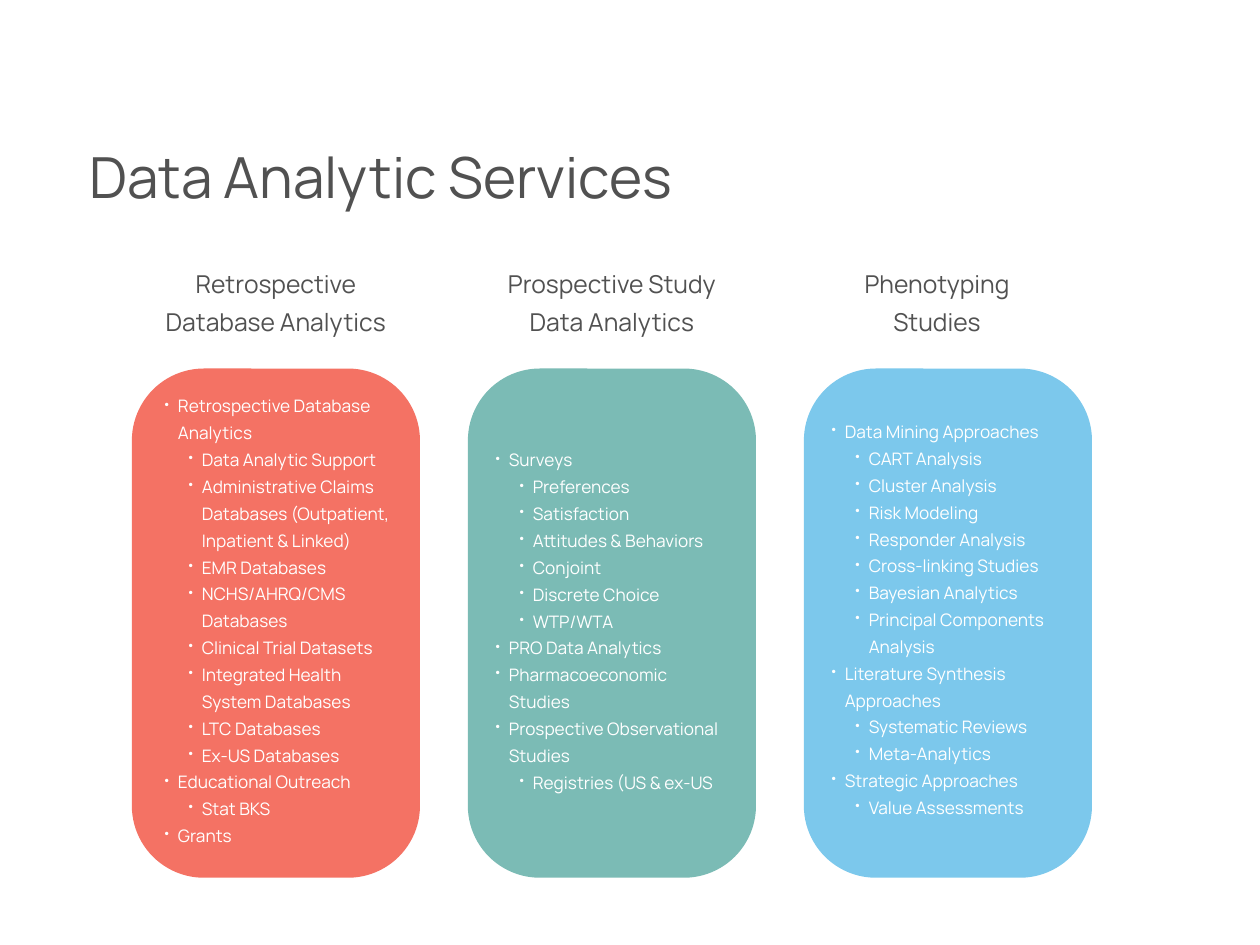
from dataclasses import dataclass

from lxml.etree import SubElement
from pptx import Presentation
from pptx.dml.color import RGBColor
from pptx.enum.shapes import MSO_SHAPE
from pptx.enum.text import MSO_ANCHOR, MSO_AUTO_SIZE, PP_ALIGN
from pptx.oxml.ns import qn
from pptx.util import Inches, Pt

WIDTH, HEIGHT = Inches(14.22), Inches(10.67)
COL, ROW = WIDTH / 15, HEIGHT / 35
FIRST_CARD, CARD_PITCH, CARD_COLS = 1.57, 4, 3.43
CARD_TOP, CARD_ROWS = 13.65, 18.86
HEADING_TOP, HEADING_ROWS = 9.55, 2.98
LIST_COLS = 2.77
FONT, INK, WHITE = "Manrope", "515151", "FFFFFF"
LINE_SPACING = 1.3
PAD = Inches(0.03)
HANG = Inches(0.15)
INDENTS = (Inches(0.15), Inches(0.42))


@dataclass
class Box:
    left: float
    top: float
    cols: float
    rows: float

    def emu(self) -> tuple[int, int, int, int]:
        return (round(self.left * COL), round(self.top * ROW),
                round(self.cols * COL), round(self.rows * ROW))


@dataclass
class Service:
    heading: str
    fill: str
    heading_inset: float
    heading_cols: float
    list_inset: float
    list_top: float
    list_rows: float
    topics: list[tuple[str, list[str]]]


SERVICES = [
    Service("Retrospective Database Analytics", "F47264", 0.33, 2.77, 0.39, 14.43, 17.52, [
        ("Retrospective Database Analytics", [
            "Data Analytic Support",
            "Administrative Claims Databases (Outpatient, Inpatient & Linked)",
            "EMR Databases",
            "NCHS/AHRQ/CMS Databases",
            "Clinical Trial Datasets",
            "Integrated Health System Databases",
            "LTC Databases",
            "Ex-US Databases",
        ]),
        ("Educational Outreach", ["Stat BKS"]),
        ("Grants", []),
    ]),
    Service("Prospective Study Data Analytics", "7BBBB5", 0.33, 2.77, 0.33, 16.43, 13.35, [
        ("Surveys", [
            "Preferences",
            "Satisfaction",
            "Attitudes & Behaviors",
            "Conjoint",
            "Discrete Choice",
            "WTP/WTA",
        ]),
        ("PRO Data Analytics", []),
        ("Pharmacoeconomic Studies", []),
        ("Prospective Observational Studies", ["Registries (US & ex-US"]),
    ]),
    Service("Phenotyping Studies", "7CC8EC", 0.4, 2.37, 0.33, 15.38, 15.42, [
        ("Data Mining Approaches", [
            "CART Analysis",
            "Cluster Analysis",
            "Risk Modeling",
            "Responder Analysis",
            "Cross-linking Studies",
            "Bayesian Analytics",
            "Principal Components Analysis",
        ]),
        ("Literature Synthesis Approaches", ["Systematic Reviews", "Meta-Analytics"]),
        ("Strategic Approaches", ["Value Assessments"]),
    ]),
]


def color(value: str) -> RGBColor:
    return RGBColor.from_string(value)


def add_frame(s, box: Box, pad: int, anchor: MSO_ANCHOR):
    tf = s.shapes.add_textbox(*box.emu()).text_frame
    tf.word_wrap = True
    tf.auto_size = MSO_AUTO_SIZE.SHAPE_TO_FIT_TEXT
    tf.vertical_anchor = anchor
    tf.margin_left = tf.margin_right = tf.margin_top = tf.margin_bottom = pad
    return tf


def add_run(p, text: str, size: float, ink: str) -> None:
    p.line_spacing = LINE_SPACING
    r = p.add_run()
    r.text = text
    r.font.name = FONT
    r.font.size = Pt(size)
    r.font.color.rgb = color(ink)


def add_label(s, box: Box, text: str, size: float, align: PP_ALIGN) -> None:
    p = add_frame(s, box, PAD, MSO_ANCHOR.MIDDLE).paragraphs[0]
    p.alignment = align
    add_run(p, text, size, INK)


def add_bullet(p, level: int) -> None:
    p.level = level
    p.line_spacing = LINE_SPACING
    pPr = p._p.get_or_add_pPr()
    pPr.set("marL", str(INDENTS[level]))
    pPr.set("indent", str(-HANG))
    bullet_color = SubElement(pPr, qn("a:buClr"))
    SubElement(bullet_color, qn("a:srgbClr"), val=WHITE)
    SubElement(pPr, qn("a:buSzPct"), val="75000")
    SubElement(pPr, qn("a:buChar"), char="•")


def add_topics(s, box: Box, topics: list[tuple[str, list[str]]]) -> None:
    tf = add_frame(s, box, 0, MSO_ANCHOR.TOP)
    items = [(level, text) for topic, details in topics
             for level, text in [(0, topic), *((1, d) for d in details)]]
    for i, (level, text) in enumerate(items):
        p = tf.add_paragraph() if i else tf.paragraphs[0]
        add_bullet(p, level)
        add_run(p, text, 14, WHITE)


def add_card(s, box: Box, fill: str) -> None:
    sp = s.shapes.add_shape(MSO_SHAPE.ROUNDED_RECTANGLE, *box.emu())
    sp.adjustments[0] = 0.25
    sp.shadow.inherit = False
    sp.fill.solid()
    sp.fill.fore_color.rgb = color(fill)
    sp.line.fill.background()


def add_service(s, left: float, service: Service) -> None:
    add_card(s, Box(left, CARD_TOP, CARD_COLS, CARD_ROWS), service.fill)
    add_label(s, Box(left + service.heading_inset, HEADING_TOP,
                     service.heading_cols, HEADING_ROWS),
              service.heading, 20, PP_ALIGN.CENTER)
    add_topics(s, Box(left + service.list_inset, service.list_top,
                      LIST_COLS, service.list_rows), service.topics)


def main() -> None:
    prs = Presentation()
    prs.slide_width, prs.slide_height = WIDTH, HEIGHT
    s = prs.slides.add_slide(prs.slide_layouts[6])
    s.background.fill.solid()
    s.background.fill.fore_color.rgb = color(WHITE)
    add_label(s, Box(1.03, 4.79, 8.37, 2.66), "Data Analytic Services", 46, PP_ALIGN.LEFT)
    for i, service in enumerate(SERVICES):
        add_service(s, FIRST_CARD + i * CARD_PITCH, service)
    prs.save("out.pptx")


if __name__ == "__main__":
    main()
